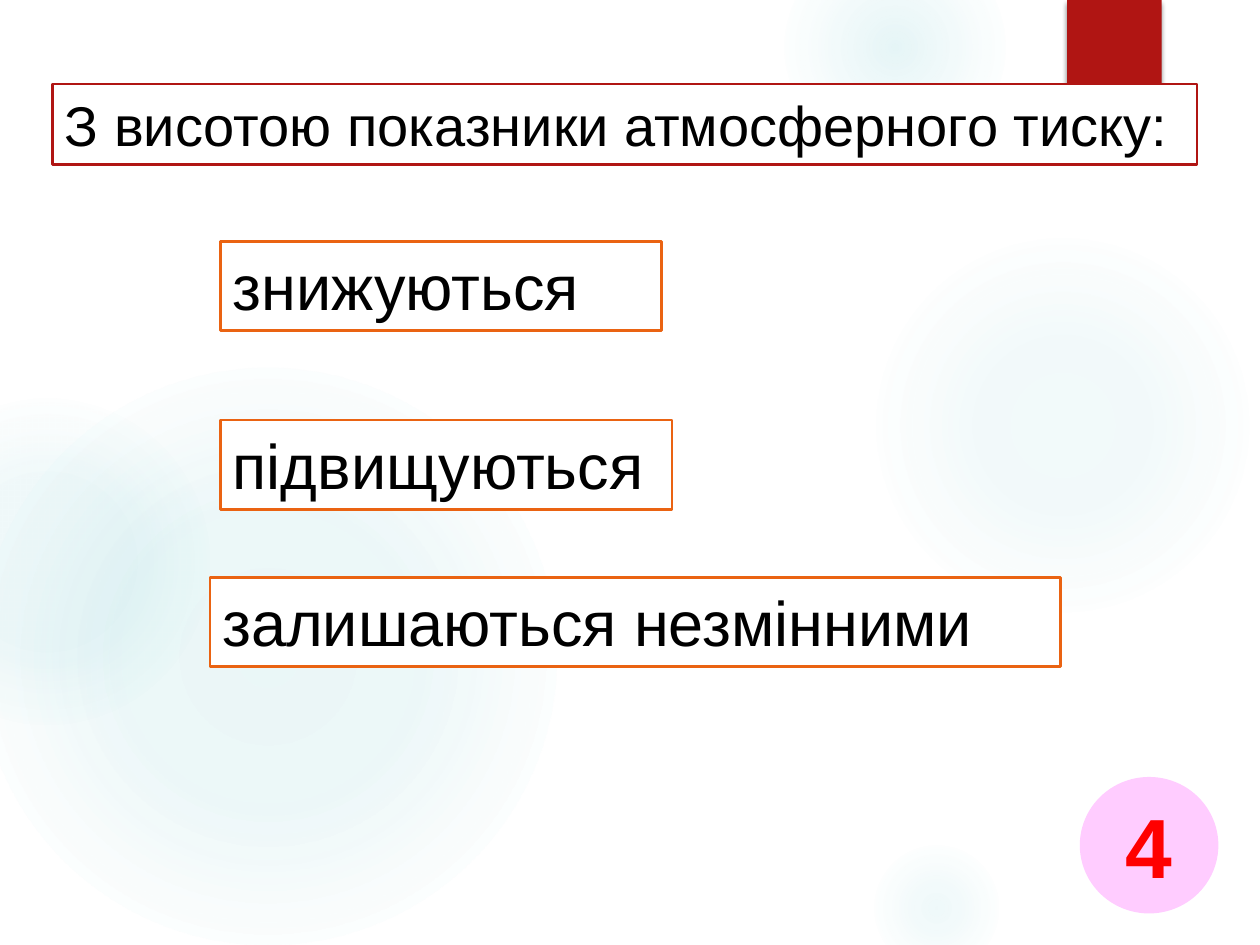
from lxml import etree
from pptx import Presentation
from pptx.dml.color import RGBColor
from pptx.enum.shapes import MSO_SHAPE as Shape
from pptx.enum.text import MSO_ANCHOR as Anchor, MSO_AUTO_SIZE as AutoSize, PP_ALIGN as Align
from pptx.oxml import parse_xml
from pptx.oxml.ns import nsdecls, qn
from pptx.util import Inches, Pt

WHITE = RGBColor(0xFF, 0xFF, 0xFF)
BLACK = RGBColor(0, 0, 0)
RED = RGBColor(0xFF, 0, 0)
CRIMSON = RGBColor(0xB0, 0x15, 0x13)
ORANGE = RGBColor(0xEA, 0x63, 0x12)
PINK = RGBColor(0xFF, 0xCC, 0xFF)
TEAL = RGBColor(0x4C, 0xB9, 0xC3)

CELL = 1 / 12  # grid cell in inches: the slide has 120 columns and 90 rows

# Glows: column, row, diameter, (position %, opacity %) of the inner stops
GLOWS = [
    (82.7, 22, 37, [(0, 7), (36, 6), (69, 0)]),
    (74.7, -6, 21, [(0, 14), (36, 7), (73, 0)]),
    (82.7, 80, 13, [(0, 9), (36, 5), (66, 0)]),
    (-2, 35, 55, [(0, 11), (36, 10), (75, 0)]),
    (-11, 38, 31, [(0, 8), (36, 8), (72, 0)]),
]

# Answers: column, row, width, text
ANSWERS = [
    (21, 23, 42, "знижуються"),
    (20, 55, 81, "залишаються незмінними"),
    (21, 40, 43, "підвищуються"),
]


def add_block(s, kind, cells, fill=None, line=None):
    """Add a preset shape placed in grid cells."""
    sp = s.shapes.add_shape(kind, *[Inches(n * CELL) for n in cells])
    sp.shadow.inherit = False
    if fill is not None:
        sp.fill.solid()
        sp.fill.fore_color.rgb = fill
    if line is None:
        sp.line.fill.background()
    else:
        sp.line.color.rgb = line
        sp.line.width = Pt(1.5)
    return sp


def add_glow(s, col, row, size, stops):
    """Add a circle that fades out from its centre."""
    sp = add_block(s, Shape.OVAL, (col, row, size, size))
    gs = "".join(
        f'<a:gs pos="{pos * 1000}"><a:srgbClr val="{TEAL}">'
        f'<a:alpha val="{alpha * 1000}"/></a:srgbClr></a:gs>'
        for pos, alpha in stops + [(100, 0)])
    grad = parse_xml(
        f'<a:gradFill {nsdecls("a")} rotWithShape="1"><a:gsLst>{gs}</a:gsLst>'
        '<a:path path="circle"><a:fillToRect l="50000" t="50000" r="50000" b="50000"/>'
        '</a:path></a:gradFill>')
    sp._element.spPr.find(qn("a:prstGeom")).addnext(grad)


def add_ribbon(s):
    """Add the top ribbon with its soft shadow."""
    sp = add_block(s, Shape.RECTANGLE, (101.64, 0, 9, 14.4), CRIMSON)
    effects = sp._element.spPr.find(qn("a:effectLst"))
    shadow = etree.SubElement(effects, qn("a:outerShdw"), blurRad=str(Pt(3)),
                              dist=str(Pt(2)), dir=str(90 * 60000), rotWithShape="0")
    color = etree.SubElement(shadow, qn("a:srgbClr"), val=str(BLACK))
    etree.SubElement(color, qn("a:alpha"), val="45000")


def write(sp, text, size, color=BLACK, bold=False, align=Align.LEFT, anchor=Anchor.TOP,
          auto_size=AutoSize.SHAPE_TO_FIT_TEXT):
    """Put one formatted line of text in a shape."""
    tf = sp.text_frame
    frame = {"word_wrap": True, "auto_size": auto_size, "vertical_anchor": anchor}
    for name, value in frame.items():
        setattr(tf, name, value)
    p = tf.paragraphs[0]
    p.alignment = align
    r = p.add_run()
    r.text = text
    for name, value in {"name": "Arial", "size": Pt(size), "bold": bold}.items():
        setattr(r.font, name, value)
    r.font.color.rgb = color


def main():
    prs = Presentation()
    prs.slide_width, prs.slide_height = Inches(10), Inches(7.5)
    s = prs.slides.add_slide(prs.slide_layouts[6])

    # Backdrop
    for glow in GLOWS:
        add_glow(s, *glow)
    add_ribbon(s)

    # Question
    question = add_block(s, Shape.RECTANGLE, (5, 8, 109, 7.68), WHITE, CRIMSON)
    write(question, "З висотою показники атмосферного тиску:", 32)

    # Question number
    badge = add_block(s, Shape.OVAL, (102.84, 74, 13.2, 13), PINK)
    write(badge, "4", 48, RED, True, Align.CENTER, Anchor.MIDDLE, AutoSize.NONE)

    # Answers
    for col, row, width, text in ANSWERS:
        box = add_block(s, Shape.RECTANGLE, (col, row, width, 8.5), WHITE, ORANGE)
        write(box, text, 36)

    prs.save("out.pptx")


if __name__ == "__main__":
    main()
